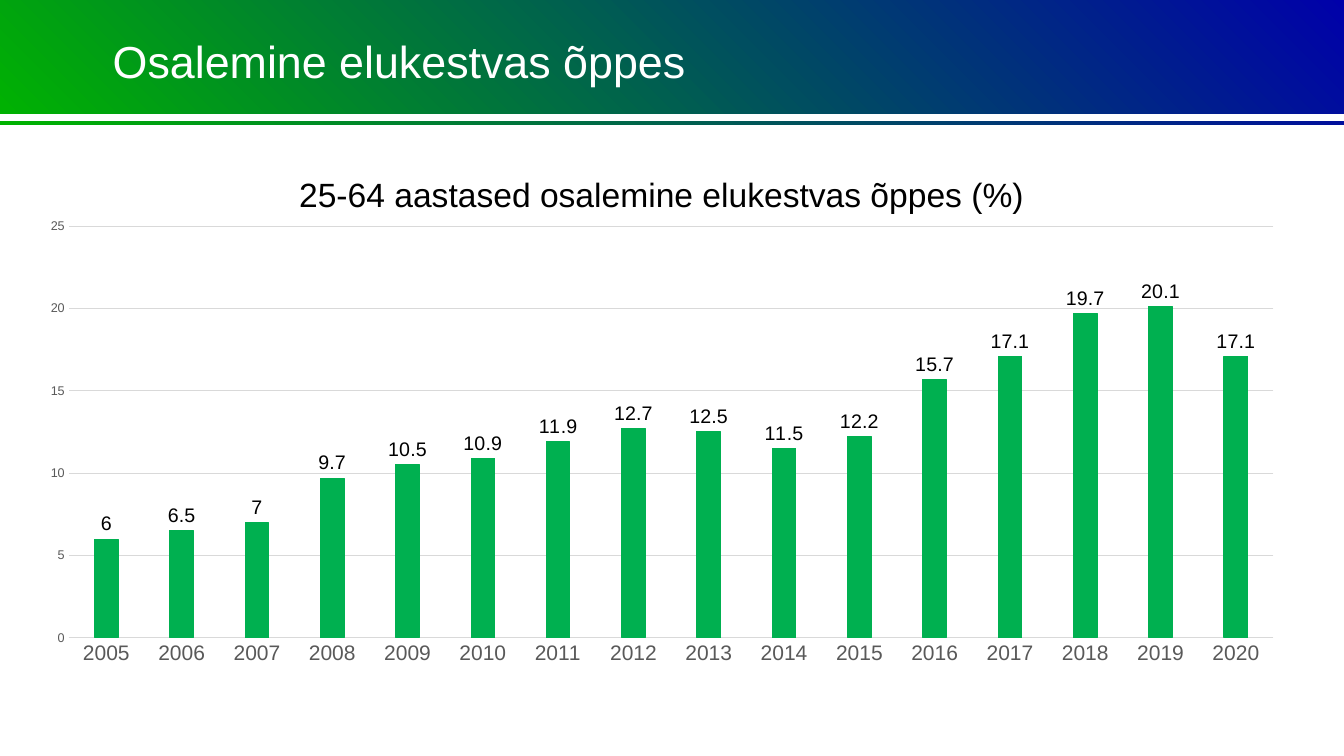
from lxml.etree import SubElement
from pptx import Presentation
from pptx.chart.data import CategoryChartData
from pptx.dml.color import RGBColor
from pptx.enum.chart import XL_CHART_TYPE, XL_LABEL_POSITION, XL_TICK_MARK
from pptx.enum.shapes import MSO_CONNECTOR, MSO_SHAPE
from pptx.enum.text import MSO_ANCHOR, PP_ALIGN
from pptx.oxml import parse_xml
from pptx.oxml.ns import nsdecls, qn
from pptx.util import Cm, Pt

FONT = "Arial"
COLORS = {
    "blue": "0000AA",
    "green": "00B300",
    "bar": "00B050",
    "grid": "D9D9D9",
    "axis": "595959",
    "white": "FFFFFF",
    "black": "000000",
}
YEARS = [str(year) for year in range(2005, 2021)]
RATES = [6, 6.5, 7, 9.7, 10.5, 10.9, 11.9, 12.7,
         12.5, 11.5, 12.2, 15.7, 17.1, 19.7, 20.1, 17.1]


def rgb(name):
    return RGBColor.from_string(COLORS[name])


def style_font(font, size, color):
    font.name = FONT
    font.size = Pt(size)
    font.bold = False
    font.color.rgb = rgb(color)


def style_line(line, color, width=0.75):
    line.color.rgb = rgb(color)
    line.width = Pt(width)


def add_band(s, left, top, width, height):
    band = s.shapes.add_shape(MSO_SHAPE.RECTANGLE, left, top, width, height)
    band.shadow.inherit = False
    band.line.fill.background()
    band.fill.gradient()
    band.fill.gradient_angle = 225
    for stop, color, position in zip(band.fill.gradient_stops, ("blue", "green"), (0, 1)):
        stop.color.rgb = rgb(color)
        stop.position = position


def add_rule(s, y, width):
    rule = s.shapes.add_connector(MSO_CONNECTOR.STRAIGHT, 0, y, width, y)
    style_line(rule.line, "white", 5)
    SubElement(rule.element.spPr, qn("a:effectLst"))


def set_title(s, text, left, top, width, height):
    title = s.shapes.title
    title.left, title.top, title.width, title.height = left, top, width, height
    title.element.getparent().append(title.element)  # in front of the band
    tf = title.text_frame
    tf.text = text
    tf.word_wrap = True
    tf.vertical_anchor = MSO_ANCHOR.MIDDLE
    tf.margin_left = tf.margin_right = tf.margin_top = tf.margin_bottom = Cm(0.2)
    p = tf.paragraphs[0]
    p.alignment = PP_ALIGN.LEFT
    style_font(p.runs[0].font, 32, "white")


def set_layout(parent, index, **fractions):
    """Place a chart part by fractions of the chart's size."""
    for old in parent.findall(qn("c:layout")):
        parent.remove(old)
    target = '<c:layoutTarget val="inner"/>' if "w" in fractions else ""
    modes = "".join(f'<c:{k}Mode val="edge"/>' for k in "xy")
    values = "".join(f'<c:{k} val="{v}"/>' for k, v in fractions.items())
    parent.insert(index, parse_xml(
        f'<c:layout {nsdecls("c")}><c:manualLayout>{target}{modes}{values}'
        '</c:manualLayout></c:layout>'))


def style_axes(chart):
    years, rates = chart.category_axis, chart.value_axis
    for axis, size in ((years, 15), (rates, 9)):
        axis.major_tick_mark = axis.minor_tick_mark = XL_TICK_MARK.NONE
        style_font(axis.tick_labels.font, size, "axis")
    style_line(years.format.line, "grid")
    rates.format.line.fill.background()
    rates.minimum_scale, rates.maximum_scale, rates.major_unit = 0, 25, 5
    style_line(rates.major_gridlines.format.line, "grid")


def add_rate_chart(s, title, left, top, width, height):
    data = CategoryChartData()
    data.categories = YEARS
    data.add_series("Series 1", RATES)
    chart = s.shapes.add_chart(
        XL_CHART_TYPE.COLUMN_CLUSTERED, left, top, width, height, data).chart
    style_font(chart.font, 10, "black")
    chart.has_legend = False

    tf = chart.chart_title.text_frame
    tf.text = title
    style_font(tf.paragraphs[0].runs[0].font, 24, "black")
    set_layout(chart.chart_title.element if hasattr(chart.chart_title, "element")
               else tf._txBody.getparent().getparent(), 1, x=0.21, y=0.04)

    plot = chart.plots[0]
    plot.vary_by_categories = False
    plot.gap_width, plot.overlap = 219, -27
    set_layout(chart.element.find(".//" + qn("c:plotArea")), 0,
               x=0.034, y=0.152, w=0.945, h=0.774)

    bars = plot.series[0]
    bars.format.fill.solid()
    bars.format.fill.fore_color.rgb = rgb("bar")
    style_line(bars.format.line, "bar")
    labels = bars.data_labels
    labels.show_value = True
    labels.position = XL_LABEL_POSITION.OUTSIDE_END
    style_font(labels.font, 14, "black")
    style_axes(chart)


def main():
    prs = Presentation()
    prs.slide_width, prs.slide_height = Cm(33.87), Cm(19.05)
    s = prs.slides.add_slide(prs.slide_layouts[5])
    add_band(s, Cm(-0.05), Cm(-0.08), Cm(33.96), Cm(3.23))
    add_rule(s, Cm(2.95), prs.slide_width)
    set_title(s, "Osalemine elukestvas õppes", Cm(2.64), Cm(-0.08), Cm(22.12), Cm(3.23))
    add_rate_chart(s, "25-64 aastased osalemine elukestvas õppes (%)",
                   Cm(0.64), Cm(3.66), Cm(32.13), Cm(13.41))
    prs.save("out.pptx")


if __name__ == "__main__":
    main()
